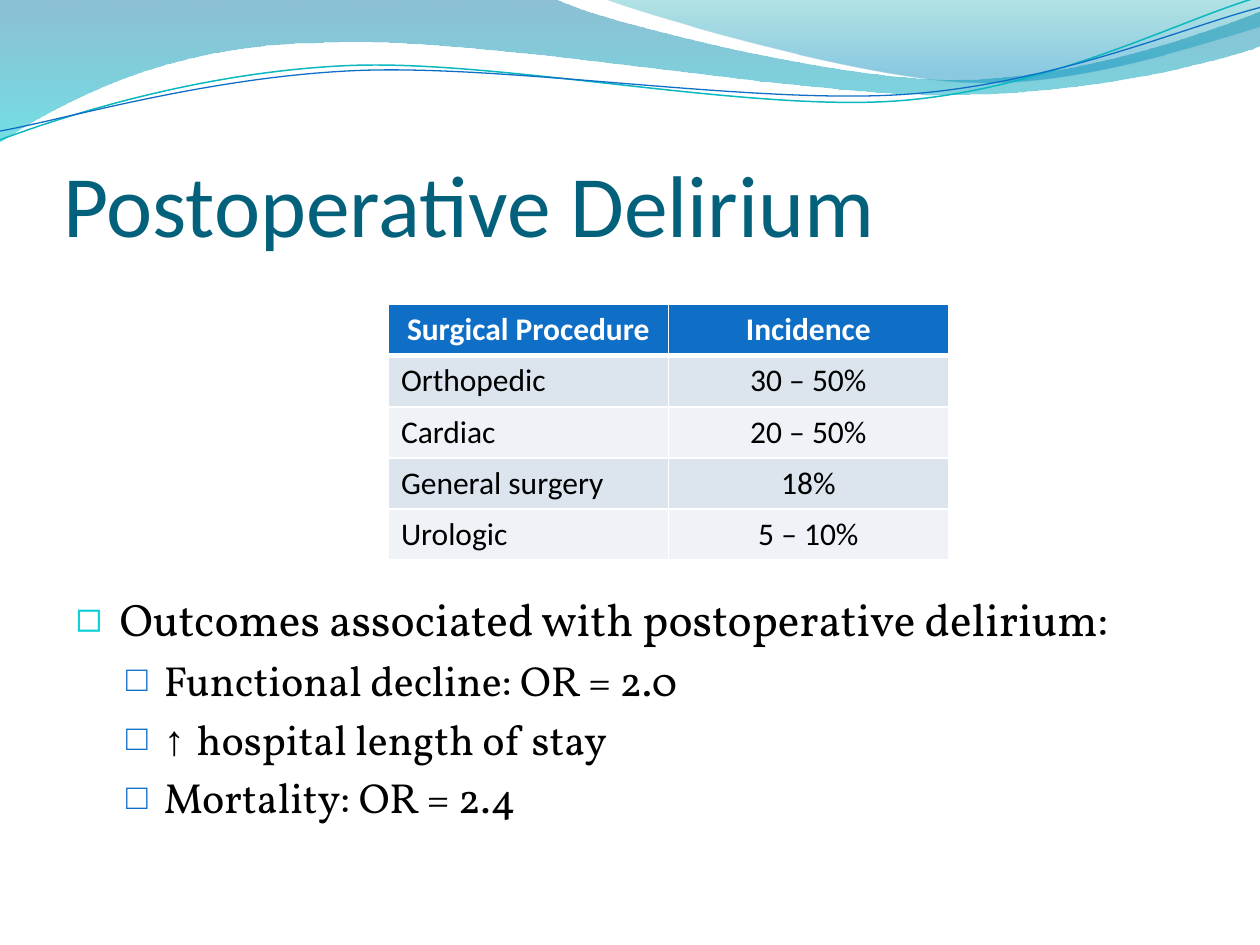
import math

import lxml.etree
import pptx
import pptx.dml.color
import pptx.enum.text
import pptx.oxml.ns
import pptx.util

Cm, Pt = pptx.util.Cm, pptx.util.Pt
RGB = pptx.dml.color.RGBColor
PP = pptx.enum.text.PP_ALIGN
ANCHOR = pptx.enum.text.MSO_ANCHOR
qn = pptx.oxml.ns.qn

WHITE, BLACK = RGB(255, 255, 255), RGB(0, 0, 0)
TITLE_TEAL = RGB(0x04, 0x61, 0x7B)
BLUE = RGB(0x0F, 0x6F, 0xC6)
CYAN = RGB(0x0B, 0xD0, 0xD9)
LINE_TEAL = RGB(0x0A, 0xB8, 0xBF)
ROW_FILLS = RGB(0xDC, 0xE5, 0xEE), RGB(0xEF, 0xF3, 0xF7)

# Waves are in tenths of the band width: a start, then lines (one point)
# and Bezier curves (two controls and an end).
# Fill stops are (position, colour, opacity in percent).
FILLED_WAVES = [
    ([[(0, -0.01)], [(4.4, -0.01)],
      [(4.76, 0.17), (6.64, 0.63), (7.58, 0.63)],
      [(8.53, 0.63), (9.58, 0.26), (10, 0.09)], [(10.01, 0.36)],
      [(9.83, 0.44), (8.7, 0.76), (7.46, 0.75)],
      [(6.22, 0.75), (3.82, 0.28), (2.57, 0.34)],
      [(1.29, 0.35), (0.46, 0.83), (-0.01, 1.13)], [(0, -0.01)]],
     [(0, RGB(0x00, 0x74, 0xA1), 45), (1, RGB(0x00, 0xC6, 0xCF), 55)]),
    ([[(4.79, -0.01)], [(5.09, 0.11), (6.82, 0.62), (7.69, 0.65)],
      [(8.56, 0.69), (9.61, 0.32), (10, 0.21)], [(10, 0)], [(4.79, -0.01)]],
     [(0, RGB(0x00, 0xA1, 0xA9), 30), (0.8, RGB(0x00, 0x8B, 0xBF), 45)]),
]
LINE_WAVES = [
    ([[(0, 1.11)], [(0.48, 0.93), (1.58, 0.57), (2.77, 0.52)],
      [(3.95, 0.47), (5.93, 0.89), (7.13, 0.8)],
      [(8.33, 0.71), (9.38, 0.15), (9.98, -0.02)]], LINE_TEAL, 0.85),
    ([[(0, 1.04)], [(0.47, 0.96), (1.64, 0.61), (2.83, 0.56)],
      [(4.03, 0.51), (5.97, 0.83), (7.17, 0.75)],
      [(8.36, 0.67), (9.41, 0.21), (10, 0.06)]], BLUE, 0.75),
]
LINE_TILT = -2.7
LINE_CENTER = 4.99, 0.58
INCIDENCE = [("Surgical Procedure", "Incidence"), ("Orthopedic", "30 – 50%"),
             ("Cardiac", "20 – 50%"), ("General surgery", "18%"),
             ("Urologic", "5 – 10%")]
OUTCOMES = [
    (0, [("Outcomes associated with postoperative delirium:", "Vollkorn")]),
    (1, [("Functional decline: OR = 2.0", "Vollkorn")]),
    (1, [("↑ ", "Arial"), ("hospital length of stay", "Vollkorn")]),
    (1, [("Mortality: OR = 2.4", "Vollkorn")]),
]
# Size, text indent, bullet hang, bullet, bullet colour and percent by level
LEVELS = [(26, 0.89, 0.89, "◻", CYAN, 95), (24, 1.78, 0.76, "□", BLUE, 85)]


def add_text(p, text, size=18, font="Calibri", color=BLACK, bold=False, align=None):
    r = p.add_run()
    r.text = text
    r.font.size, r.font.name, r.font.bold = Pt(size), font, bold
    r.font.color.rgb = color
    if align is not None:
        p.alignment = align


def sub(parent, tag, **attrs):
    return lxml.etree.SubElement(parent, qn(tag), {k: str(v) for k, v in attrs.items()})


def turn(point, degrees):
    """Turn a point clockwise about the centre of the line waves."""
    (cx, cy), a = LINE_CENTER, math.radians(degrees)
    x, y = point[0] - cx, point[1] - cy
    return (cx + x * math.cos(a) - y * math.sin(a),
            cy + x * math.sin(a) + y * math.cos(a))


def add_wave(s, wave, left, top, width, closed, tilt=0):
    unit = width / 10
    points = [(left + x * unit, top + y * unit)
              for x, y in (turn(pt, -tilt) for seg in wave for pt in seg)]
    builder = s.shapes.build_freeform(*points[0])
    builder.add_line_segments(points[1:], close=closed)
    sp = builder.convert_to_shape()
    sp.rotation = tilt
    sp.shadow.inherit = False
    # Join the three lines of each curve into one Bezier segment
    lines = sp._element.spPr.iter(qn("a:lnTo"))
    lines = iter(list(lines))
    for seg in wave[1:]:
        group = [next(lines) for _ in seg]
        if len(seg) == 3:
            curve = lxml.etree.Element(qn("a:cubicBezTo"))
            group[0].addprevious(curve)
            for line in group:
                curve.append(line[0])
                line.getparent().remove(line)
    return sp


def add_wave_band(s, left, top, width):
    for wave, stops in FILLED_WAVES:
        sp = add_wave(s, wave, left, top, width, closed=True)
        sp.line.fill.background()
        sp.fill.gradient()
        sp.fill.gradient_angle = 270
        for stop, (position, color, opacity) in zip(sp.fill.gradient_stops, stops):
            stop.position = position
            stop.color.rgb = color
        for clr, stop in zip(sp._element.spPr.iter(qn("a:srgbClr")), stops):
            sub(clr, "a:alpha", val=stop[2] * 1000)
    for wave, color, weight in LINE_WAVES:
        sp = add_wave(s, wave, left, top, width, closed=False, tilt=LINE_TILT)
        sp.fill.background()
        sp.line.color.rgb = color
        sp.line.width = Pt(weight)


def place(s, sp, left, top, width, height, anchor):
    """Move a placeholder in front of the waves and return its text frame."""
    sp.left, sp.top, sp.width, sp.height = left, top, width, height
    s.shapes._spTree.append(sp._element)
    tf = sp.text_frame
    tf.auto_size = pptx.enum.text.MSO_AUTO_SIZE.NONE
    tf.vertical_anchor = anchor
    return tf


def fill_title(s, text, *box):
    tf = place(s, s.shapes.title, *box, ANCHOR.BOTTOM)
    tf.margin_left = tf.margin_right = tf.margin_bottom = 0
    add_text(tf.paragraphs[0], text, size=50, color=TITLE_TEAL, align=PP.LEFT)


def fill_outcomes(s, *box):
    tf = place(s, s.placeholders[1], *box, ANCHOR.TOP)
    tf.margin_top = Cm(6.54)  # leaves room for the table
    for i, (level, runs) in enumerate(OUTCOMES):
        p = tf.add_paragraph() if i else tf.paragraphs[0]
        p.level = level
        size, indent, hang, bullet, color, percent = LEVELS[level]
        pPr = p._p.get_or_add_pPr()
        pPr.set("marL", str(Cm(indent)))
        pPr.set("indent", str(-Cm(hang)))
        sub(sub(pPr, "a:buClr"), "a:srgbClr", val=color)
        sub(pPr, "a:buSzPct", val=percent * 1000)
        sub(pPr, "a:buChar", char=bullet)
        for text, font in runs:
            add_text(p, text, size=size, font=font)


def set_borders(cell, **weights):
    tcPr = cell._tc.get_or_add_tcPr()
    for i, side in enumerate("LRTB"):
        ln = sub(tcPr, "a:ln" + side, w=Pt(weights.get(side, 1)))
        sub(sub(ln, "a:solidFill"), "a:srgbClr", val=WHITE)
        tcPr.insert(i, ln)


def add_incidence_table(s, left, top, width, height):
    rows, cols = len(INCIDENCE), len(INCIDENCE[0])
    table = s.shapes.add_table(rows, cols, left, top, width, height).table
    for i, row in enumerate(INCIDENCE):
        head = i == 0
        for j, text in enumerate(row):
            cell = table.cell(i, j)
            cell.fill.solid()
            cell.fill.fore_color.rgb = BLUE if head else ROW_FILLS[(i - 1) % 2]
            set_borders(cell, B=3 if head else 1, T=3 if i == 1 else 1)
            add_text(cell.text_frame.paragraphs[0], text, bold=head,
                     color=WHITE if head else BLACK,
                     align=PP.CENTER if head or j else PP.LEFT)


def main():
    prs = pptx.Presentation()
    prs.slide_width, prs.slide_height = Cm(25.4), Cm(19.05)
    s = prs.slides.add_slide(prs.slide_layouts[1])
    add_wave_band(s, 0, 0, prs.slide_width)
    fill_title(s, "Postoperative Delirium", Cm(1.27), Cm(1.96), Cm(22.86), Cm(3.18))
    fill_outcomes(s, Cm(1.27), Cm(5.38), Cm(22.86), Cm(12.19))
    add_incidence_table(s, Cm(7.83), Cm(6.14), Cm(11.29), Cm(5.15))
    prs.save("out.pptx")


if __name__ == "__main__":
    main()
